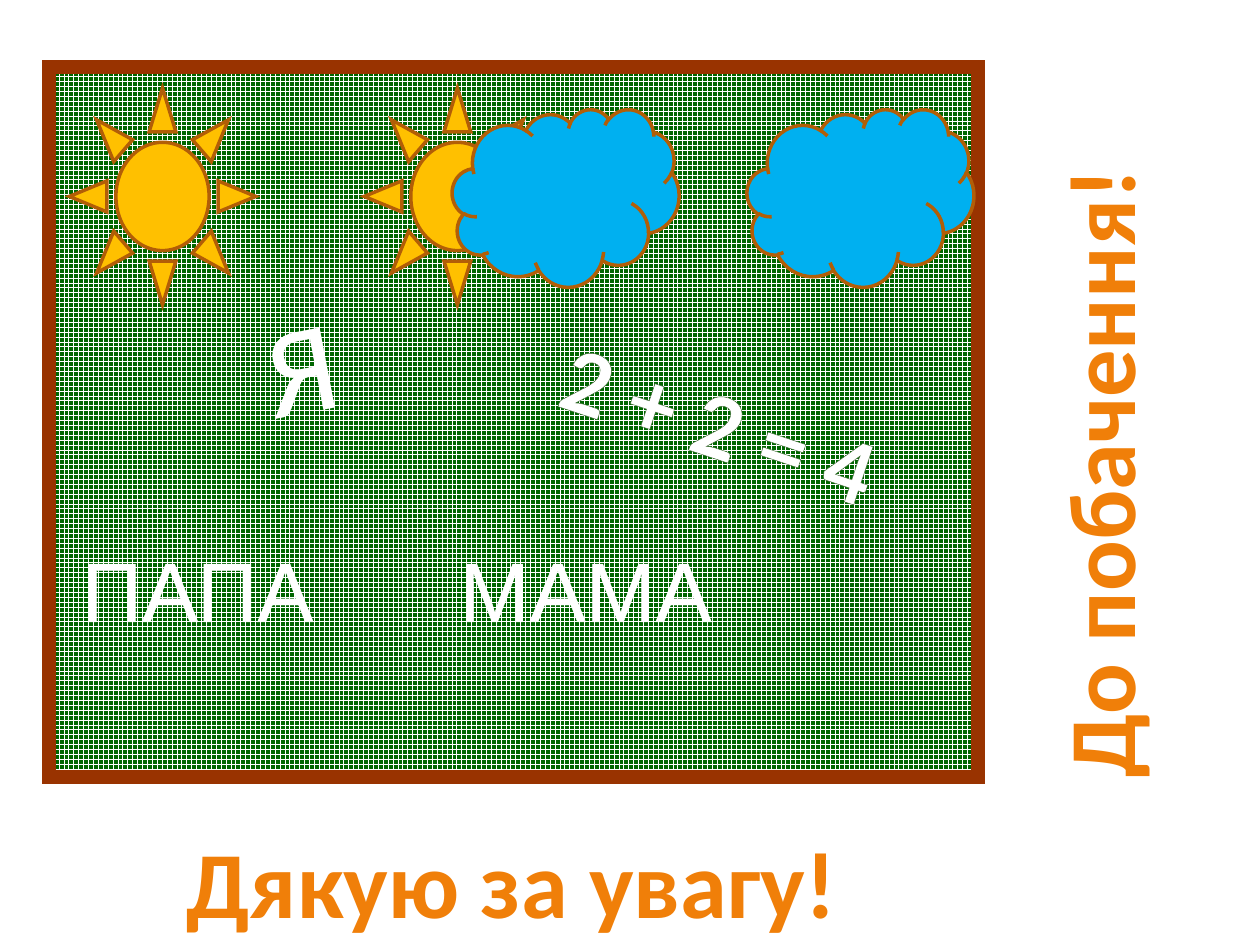
from lxml import etree
from pptx import Presentation
from pptx.dml.color import RGBColor
from pptx.enum.dml import MSO_PATTERN
from pptx.enum.shapes import MSO_SHAPE as SHAPE
from pptx.enum.text import MSO_AUTO_SIZE as AUTO, PP_ALIGN as ALIGN
from pptx.oxml.ns import qn
from pptx.util import Inches, Pt

W, H = Inches(10), Inches(7.5)
WHITE, ORANGE, BROWN = "FFFFFF", "F07F09", "B25E07"
SUN_SIZE, CLOUD_SIZE = (14.8, 22.93), (18, 18.8)
SKY_STEP = 23.4


def rgb(value):
    return RGBColor.from_string(value)


def place(x, y, w, h):
    return int(W * x / 100), int(H * y / 100), int(W * w / 100), int(H * h / 100)


def add_shape(slide, kind, box, line, width):
    sp = slide.shapes.add_shape(kind, *place(*box))
    sp.shadow.inherit = False
    sp.line.color.rgb = rgb(line)
    sp.line.width = Pt(width)
    miter = etree.SubElement(sp.line._get_or_add_ln(), qn("a:miter"))
    miter.set("lim", "800000")
    return sp


def add_board(slide):
    sp = add_shape(slide, SHAPE.RECTANGLE, (3.9, 7.07, 73.7, 75.2), "993300", 8)
    sp.fill.patterned()
    sp.fill.pattern = MSO_PATTERN.LARGE_GRID
    sp.fill.fore_color.rgb = rgb(WHITE)
    sp.fill.back_color.rgb = rgb("006600")


def add_sky(slide, kind, x, y, size, color):
    sp = add_shape(slide, kind, (x, y, *size), BROWN, 2)
    sp.fill.solid()
    sp.fill.fore_color.rgb = rgb(color)


def add_sun(slide, col):
    add_sky(slide, SHAPE.SUN, 5.5 + SKY_STEP * col, 9.33, SUN_SIZE, "FFC000")


def add_cloud(slide, col):
    add_sky(slide, SHAPE.CLOUD, 12.5 + SKY_STEP * col, 11.55, CLOUD_SIZE, "00B0F0")


def set_outline(r, color, width):
    ln = etree.Element(qn("a:ln"), w=str(Pt(width)))
    fill = etree.SubElement(ln, qn("a:solidFill"))
    etree.SubElement(fill, qn("a:srgbClr"), val=color)
    r.font._element.insert(0, ln)


def set_tab(p, inches):
    tabs = etree.SubElement(p._p.get_or_add_pPr(), qn("a:tabLst"))
    etree.SubElement(tabs, qn("a:tab"), pos=str(Inches(inches)), algn="l")


def add_text(slide, text, box, size, color, font="Calibri", bold=False,
             align=ALIGN.CENTER, rot=0, wrap=True, outline=None, tab=None):
    sp = slide.shapes.add_textbox(*place(*box))
    sp.rotation = rot
    tf = sp.text_frame
    tf.word_wrap = wrap
    tf.auto_size = AUTO.SHAPE_TO_FIT_TEXT
    p = tf.paragraphs[0]
    p.alignment = align
    if tab:
        set_tab(p, tab)
    r = p.add_run()
    r.text = text
    r.font.size = Pt(size)
    r.font.name = font
    r.font.bold = bold
    r.font.color.rgb = rgb(color)
    if outline:
        set_outline(r, *outline)


def main():
    prs = Presentation()
    prs.slide_width, prs.slide_height = W, H
    s = prs.slides.add_slide(prs.slide_layouts[6])
    add_board(s)
    add_text(s, "2 + 2 = 4", (43.1, 37.87, 28.1, 13.47), 54, WHITE,
             bold=True, rot=18.4, outline=("37672C", 0.71))
    add_cloud(s, 2)
    add_sun(s, 0)
    add_text(s, "ПАПА\tМАМА", (5.5, 56.27, 55.5, 12.13), 48, WHITE,
             font="Arial", align=ALIGN.LEFT, outline=(WHITE, 1.45), tab=3)
    add_text(s, "Я", (16.7, 29.73, 14.1, 17.47), 72, WHITE,
             rot=349.2, outline=(WHITE, 1.45))
    add_sun(s, 1)
    add_cloud(s, 1)
    add_text(s, "Дякую за увагу!", (6.2, 86.53, 68.8, 13.47), 54, ORANGE, bold=True)
    add_text(s, "До побачення!", (61.8, 43.33, 50.8, 13.47), 54, ORANGE,
             bold=True, rot=270, wrap=False)
    prs.save("out.pptx")


if __name__ == "__main__":
    main()
